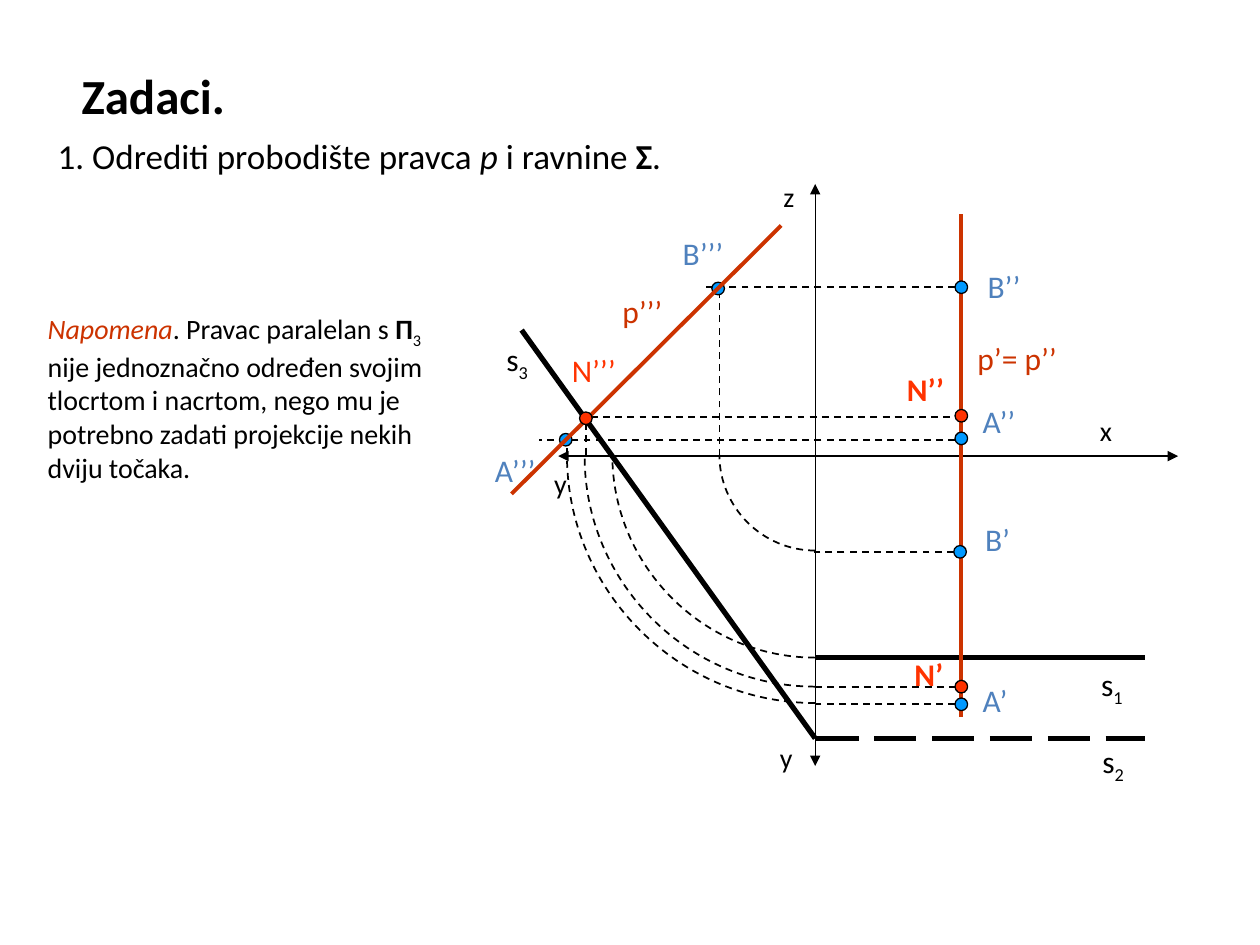
from dataclasses import dataclass

import pptx
import pptx.dml.color
import pptx.enum.dml
import pptx.enum.shapes
import pptx.enum.text
import pptx.oxml
import pptx.oxml.ns
import pptx.util

Inches = pptx.util.Inches
DASH = pptx.enum.dml.MSO_LINE.DASH
LONG_DASH = pptx.enum.dml.MSO_LINE.LONG_DASH
NAMESPACE = pptx.oxml.ns.nsdecls("a")


@dataclass(frozen=True)
class Theme:
    font: str = "Calibri"
    black: str = "000000"
    line_red: str = "CC3300"
    pierce_red: str = "FF3300"
    point_blue: str = "0099FF"
    label_blue: str = "4F81BD"
    title: int = 28
    task: int = 20
    label: int = 18
    note: int = 16
    thin: float = 0.75
    guide: float = 1
    strong: float = 2.25
    trace: float = 3
    dot: float = 0.1


class Drawing:
    def __init__(self, page, theme):
        self.page = page
        self.theme = theme

    def color(self, value):
        return pptx.dml.color.RGBColor.from_string(value)

    def stroke(self, shape, color, width, dash=None):
        shape.line.color.rgb = self.color(color)
        shape.line.width = pptx.util.Pt(width)
        if dash is not None:
            shape.line.dash_style = dash

    def line(self, start, end, color, width, dash=None, arrows=False):
        connector = self.page.shapes.add_connector(
            pptx.enum.shapes.MSO_CONNECTOR.STRAIGHT,
            *[Inches(value) for value in (*start, *end)])
        self.stroke(connector, color, width, dash)
        properties = connector._element.spPr
        if arrows:
            outline = properties.find(pptx.oxml.ns.qn("a:ln"))
            for name in ("headEnd", "tailEnd"):
                outline.append(pptx.oxml.parse_xml(
                    f'<a:{name} {NAMESPACE} type="triangle"/>'))
        properties.append(pptx.oxml.parse_xml(f"<a:effectLst {NAMESPACE}/>"))

    def guide(self, start, end):
        self.line(start, end, self.theme.black, self.theme.guide, DASH)

    def quarter_arc(self, center, radius):
        """Lower left quarter circle, from the vertical to the horizontal axis."""
        x, y = center
        builder = self.page.shapes.build_freeform(Inches(x), Inches(y + radius))
        builder.add_line_segments([(Inches(x - radius), Inches(y))], close=False)
        arc = builder.convert_to_shape()
        arc.shadow.inherit = False
        arc.fill.background()
        self.stroke(arc, self.theme.black, self.theme.guide, DASH)
        # Bend the straight segment into one cubic curve
        size = Inches(radius)
        bend = round(size * 0.45)
        points = ((bend, size), (0, size - bend), (0, 0))
        curve = "".join(f'<a:pt x="{px}" y="{py}"/>' for px, py in points)
        segment = next(arc._element.iter(pptx.oxml.ns.qn("a:lnTo")))
        segment.getparent().replace(segment, pptx.oxml.parse_xml(
            f"<a:cubicBezTo {NAMESPACE}>{curve}</a:cubicBezTo>"))

    def dot(self, left, top, color):
        size = self.theme.dot
        dot = self.page.shapes.add_shape(
            pptx.enum.shapes.MSO_SHAPE.OVAL,
            *[Inches(value) for value in (left, top, size, size)])
        dot.shadow.inherit = False
        dot.fill.solid()
        dot.fill.fore_color.rgb = self.color(color)
        self.stroke(dot, self.theme.black, self.theme.thin)

    def text(self, area, spans, size, color=None, wrap=True):
        """Each span is (text, format); format may hold bold, italic, color, sub."""
        box = self.page.shapes.add_textbox(*[Inches(value) for value in area])
        frame = box.text_frame
        frame.word_wrap = wrap
        frame.auto_size = pptx.enum.text.MSO_AUTO_SIZE.SHAPE_TO_FIT_TEXT
        para = frame.paragraphs[0]
        for content, style in spans:
            style = dict(style)
            span_color = style.pop("color", color or self.theme.black)
            subscript = style.pop("sub", False)
            span = para.add_run()
            span.text = content
            formats = {"name": self.theme.font, "size": pptx.util.Pt(size), **style}
            for name, value in formats.items():
                setattr(span.font, name, value)
            span.font.color.rgb = self.color(span_color)
            if subscript:
                span._r.get_or_add_rPr().set("baseline", "-25000")


def main():
    theme = Theme()
    deck = pptx.Presentation()
    deck.slide_width, deck.slide_height = Inches(10), Inches(7.5)
    page = deck.slides.add_slide(deck.slide_layouts[6])
    drawing = Drawing(page, theme)

    # Positions shared by the projections
    axis_x, axis_y = 6.47, 3.62
    line_x = 7.63
    arc_center = (axis_x, 3.61)

    # Axes
    drawing.line((4.43, axis_y), (9.35, axis_y), theme.black, theme.thin, arrows=True)
    drawing.line((axis_x, 6.08), (axis_x, 1.46), theme.black, theme.thin, arrows=True)

    # Traces of the plane and front view of the line
    drawing.line((6.48, 5.86), (9.09, 5.86), theme.black, theme.trace, LONG_DASH)
    drawing.line((axis_x, 5.22), (9.09, 5.22), theme.black, theme.trace)
    drawing.line((line_x, 1.7), (line_x, 5.69), theme.line_red, theme.strong)
    drawing.quarter_arc(arc_center, 1.61)
    drawing.line((axis_x, 5.86), (4.14, 2.62), theme.black, theme.trace)

    # Construction of A, B and N
    drawing.guide((7.58, 3.49), (4.28, 3.49))
    drawing.guide((7.58, 5.59), (axis_x, 5.59))
    drawing.guide((4.5, 3.61), (4.5, 3.5))
    drawing.quarter_arc(arc_center, 1.97)
    drawing.guide((7.57, 4.38), (6.46, 4.38))
    drawing.guide((7.58, 2.28), (5.6, 2.28))
    drawing.quarter_arc(arc_center, 0.76)
    drawing.guide((5.71, axis_y), (5.71, 2.29))
    drawing.guide((4.69, 3.31), (7.62, 3.31))
    drawing.guide((4.65, 3.36), (4.65, 3.63))
    drawing.quarter_arc((axis_x, axis_y), 1.83)
    drawing.guide((axis_x, 5.45), (7.62, 5.45))

    # Points, with the side view of the line between A, B and N
    for left, top in ((7.57, 4.33), (7.58, 2.23), (7.58, 3.43), (7.58, 5.54),
                      (4.44, 3.44), (5.65, 2.24)):
        drawing.dot(left, top, theme.point_blue)
    drawing.line((4.06, 3.92), (6.2, 1.79), theme.line_red, theme.strong)
    for left, top in ((4.6, 3.27), (7.58, 3.25), (7.58, 5.4)):
        drawing.dot(left, top, theme.pierce_red)

    # Labels: text, left, top, width, colour, bold
    labels = [
        ("p’= p’’", 7.66, 2.64, 1.16, theme.line_red, False),
        ("p’’’", 4.84, 2.27, 0.62, theme.line_red, False),
        ("B’", 7.72, 4.08, 0.55, theme.label_blue, False),
        ("B’’", 7.74, 2.07, 0.67, theme.label_blue, False),
        ("B’’’", 5.32, 1.81, 0.63, theme.label_blue, False),
        ("A’", 7.7, 5.36, 0.54, theme.label_blue, False),
        ("A’’", 7.7, 3.14, 0.6, theme.label_blue, False),
        ("A’’’", 3.83, 3.53, 0.82, theme.label_blue, False),
        ("N’", 7.16, 5.15, 0.5, theme.pierce_red, True),
        ("N’’", 7.1, 2.89, 0.56, theme.pierce_red, True),
        ("N’’’", 4.44, 2.74, 0.67, theme.pierce_red, False),
    ]
    for content, left, top, width, color, bold in labels:
        drawing.text((left, top, width, 0.4), [(content, {"bold": bold})],
                     theme.label, color)
    for index, left, top, width in (("1", 8.64, 5.23, 0.51), ("2", 8.65, 5.84, 0.61),
                                    ("3", 3.92, 2.65, 0.54)):
        drawing.text((left, top, width, 0.4), [("s", {}), (index, {"sub": True})],
                     theme.label)
    for name, left, top, width in (("x", 8.63, 3.23, 0.61), ("z", 6.12, 1.38, 0.5),
                                   ("y", 6.09, 5.83, 0.42), ("y", 4.3, 3.65, 0.48)):
        drawing.text((left, top, width, 0.37), [(name, {})], theme.note)

    # Title, task and note
    drawing.text((0.55, 0.47, 1.35, 0.57), [("Zadaci.", {"bold": True})],
                 theme.title, wrap=False)
    drawing.text((0.36, 1.02, 5.18, 0.44), [
        ("1. Odrediti probodište pravca ", {}), ("p", {"italic": True}),
        (" i ravnine ", {}), ("Σ", {"bold": True}), (".", {})], theme.task)
    drawing.text((0.28, 2.42, 3.32, 1.45), [
        ("Napomena", {"italic": True, "color": theme.line_red}),
        (". Pravac paralelan s ", {}), ("Π", {"bold": True}), ("3", {"sub": True}),
        (" nije jednoznačno određen svojim tlocrtom i nacrtom, nego mu je "
         "potrebno zadati projekcije nekih dviju točaka.", {})], theme.note)

    deck.save("out.pptx")


if __name__ == "__main__":
    main()
